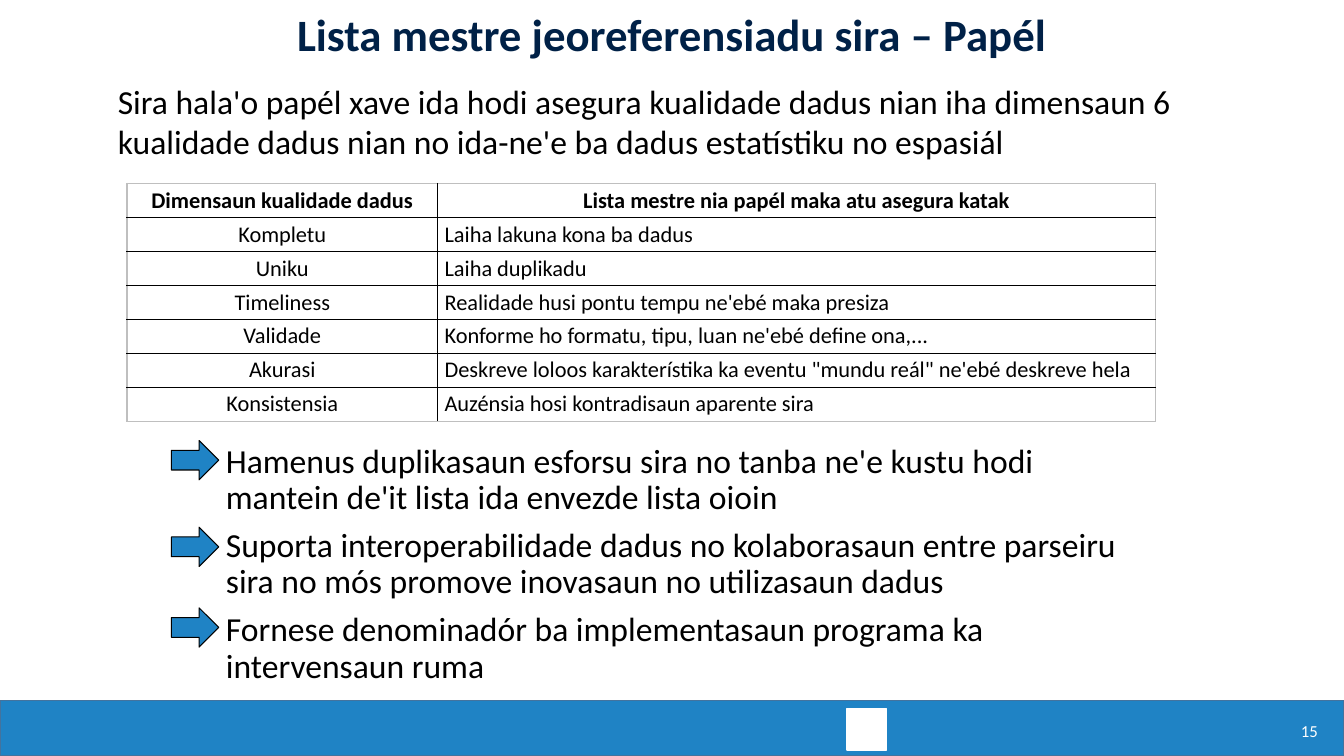
import pptx
import pptx.dml.color
import pptx.enum.shapes
import pptx.enum.text
import pptx.oxml
import pptx.oxml.ns
import pptx.util

Inches = pptx.util.Inches
Pt = pptx.util.Pt
Align = pptx.enum.text.PP_ALIGN
Anchor = pptx.enum.text.MSO_ANCHOR
Preset = pptx.enum.shapes.MSO_SHAPE

BLUE, BLACK, WHITE, NAVY, GREY = "1F83C5", "000000", "FFFFFF", "002147", "BFBFBF"
TIGHT = (0.07, 0.03)
DIMENSIONS = [
    ("Dimensaun kualidade dadus", "Lista mestre nia papél maka atu asegura katak"),
    ("Kompletu", "Laiha lakuna kona ba dadus"),
    ("Uniku", "Laiha duplikadu"),
    ("Timeliness", "Realidade husi pontu tempu ne'ebé maka presiza"),
    ("Validade", "Konforme ho formatu, tipu, luan ne'ebé define ona,..."),
    ("Akurasi", "Deskreve loloos karakterístika ka eventu \"mundu reál\" ne'ebé deskreve hela"),
    ("Konsistensia", "Auzénsia hosi kontradisaun aparente sira"),
]
BENEFITS = [
    (4.38, 9.09, "Hamenus duplikasaun esforsu sira no tanba ne'e kustu hodi "
                 "mantein de'it lista ida envezde lista oioin"),
    (5.21, 9.41, "Suporta interoperabilidade dadus no kolaborasaun entre parseiru "
                 "sira no mós promove inovasaun no utilizasaun dadus"),
    (6.05, 9.41, "Fornese denominadór ba implementasaun programa ka "
                 "intervensaun ruma"),
]
ARROW_TOPS = [4.37, 5.23, 6.03]


def rgb(hex_code):
    return pptx.dml.color.RGBColor.from_string(hex_code)


def write(paragraph, text, size, color=BLACK, bold=False, align=Align.LEFT, spacing=1.0):
    paragraph.text = text
    paragraph.alignment = align
    paragraph.line_spacing = spacing
    font_format = {"name": "Calibri", "size": Pt(size), "bold": bold}
    for attribute, value in font_format.items():
        setattr(paragraph.font, attribute, value)
    paragraph.font.color.rgb = rgb(color)


def set_insets(target, inset):
    across, down = map(Inches, inset)
    margins = {"margin_left": across, "margin_right": across,
               "margin_top": down, "margin_bottom": down}
    for attribute, value in margins.items():
        setattr(target, attribute, value)


def add_text(slide, box, text, size, inset=(0.1, 0.05), anchor=Anchor.TOP, **style):
    frame = slide.shapes.add_textbox(*map(Inches, box)).text_frame
    frame.word_wrap = True
    frame.vertical_anchor = anchor
    set_insets(frame, inset)
    write(frame.paragraphs[0], text, size, **style)


def add_preset(slide, preset, box, fill, line, line_width):
    shape = slide.shapes.add_shape(preset, *map(Inches, box))
    shape.shadow.inherit = False
    shape.fill.solid()
    shape.fill.fore_color.rgb = rgb(fill)
    shape.line.color.rgb = rgb(line)
    shape.line.width = Pt(line_width)


def set_borders(cell, colors):
    """Draw the left, right, top and bottom cell edges in the given colours."""
    properties = cell._tc.get_or_add_tcPr()
    for position, (side, color) in enumerate(zip("LRTB", colors)):
        properties.insert(position, pptx.oxml.parse_xml(
            f'<a:ln{side} {pptx.oxml.ns.nsdecls("a")} w="{Pt(1)}">'
            f'<a:solidFill><a:srgbClr val="{color}"/></a:solidFill></a:ln{side}>'))


def add_dimension_table(slide, box):
    left, top, width, height = box
    last_row = len(DIMENSIONS) - 1
    table = slide.shapes.add_table(len(DIMENSIONS), 2, *map(Inches, box)).table
    table.first_row = table.horz_banding = False
    first_width = 3.08
    table.columns[0].width = Inches(first_width)
    table.columns[1].width = Inches(width - first_width)
    for r, texts in enumerate(DIMENSIONS):
        table.rows[r].height = Inches(height / len(DIMENSIONS))
        for c, text in enumerate(texts):
            cell = table.cell(r, c)
            cell.fill.background()
            cell.vertical_anchor = Anchor.MIDDLE
            set_insets(cell, TIGHT)
            centred = r == 0 or c == 0
            write(cell.text_frame.paragraphs[0], text, 16, bold=r == 0,
                  align=Align.CENTER if centred else Align.LEFT)
            outer_edges = (c == 0, c == 1, r == 0, r == last_row)
            set_borders(cell, [GREY if outer else BLACK for outer in outer_edges])


def add_benefits(slide, left):
    """Place each benefit at left, with its arrow ending there."""
    arrow_width = 0.47
    for arrow_top, (top, width, text) in zip(ARROW_TOPS, BENEFITS):
        add_preset(slide, Preset.RIGHT_ARROW,
                   (left - arrow_width, arrow_top, arrow_width, 0.39), BLUE, BLACK, 0.75)
        add_text(slide, (left, top, width, 0.79), text, 24, inset=TIGHT, spacing=0.9)


def add_footer(slide, box):
    left, top, width, height = box
    add_preset(slide, Preset.RECTANGLE, box, BLUE, "43739E", 1)
    add_preset(slide, Preset.RECTANGLE, (left + 8.4, top + 0.08, 0.39, 0.41),
               WHITE, WHITE, 1)
    add_text(slide, (left + width - 0.59, top + 0.15, 0.43, 0.4), "15", 12,
             color=WHITE, align=Align.RIGHT)


def add_heading(slide, box):
    left, top, width, height = box
    add_text(slide, (left, top, width, 0.4), "Lista mestre jeoreferensiadu sira – Papél",
             32, anchor=Anchor.MIDDLE, color=NAVY, bold=True, align=Align.CENTER,
             spacing=0.9)
    add_text(slide, (left + 1.07, top + 0.58, 10.86, height - 0.58),
             "Sira hala'o papél xave ida hodi asegura kualidade dadus nian iha dimensaun 6 "
             "kualidade dadus nian no ida-ne'e ba dadus estatístiku no espasiál", 24)


def main():
    deck = pptx.Presentation()
    deck.slide_width, deck.slide_height = Inches(13.33), Inches(7.5)
    slide = deck.slides.add_slide(deck.slide_layouts[6])
    add_footer(slide, (0, 6.95, 13.33, 0.55))
    add_heading(slide, (0, 0.17, 13.33, 1.49))
    add_dimension_table(slide, (1.26, 1.82, 10.2, 2.36))
    add_benefits(slide, 2.17)
    deck.save("out.pptx")


if __name__ == "__main__":
    main()
